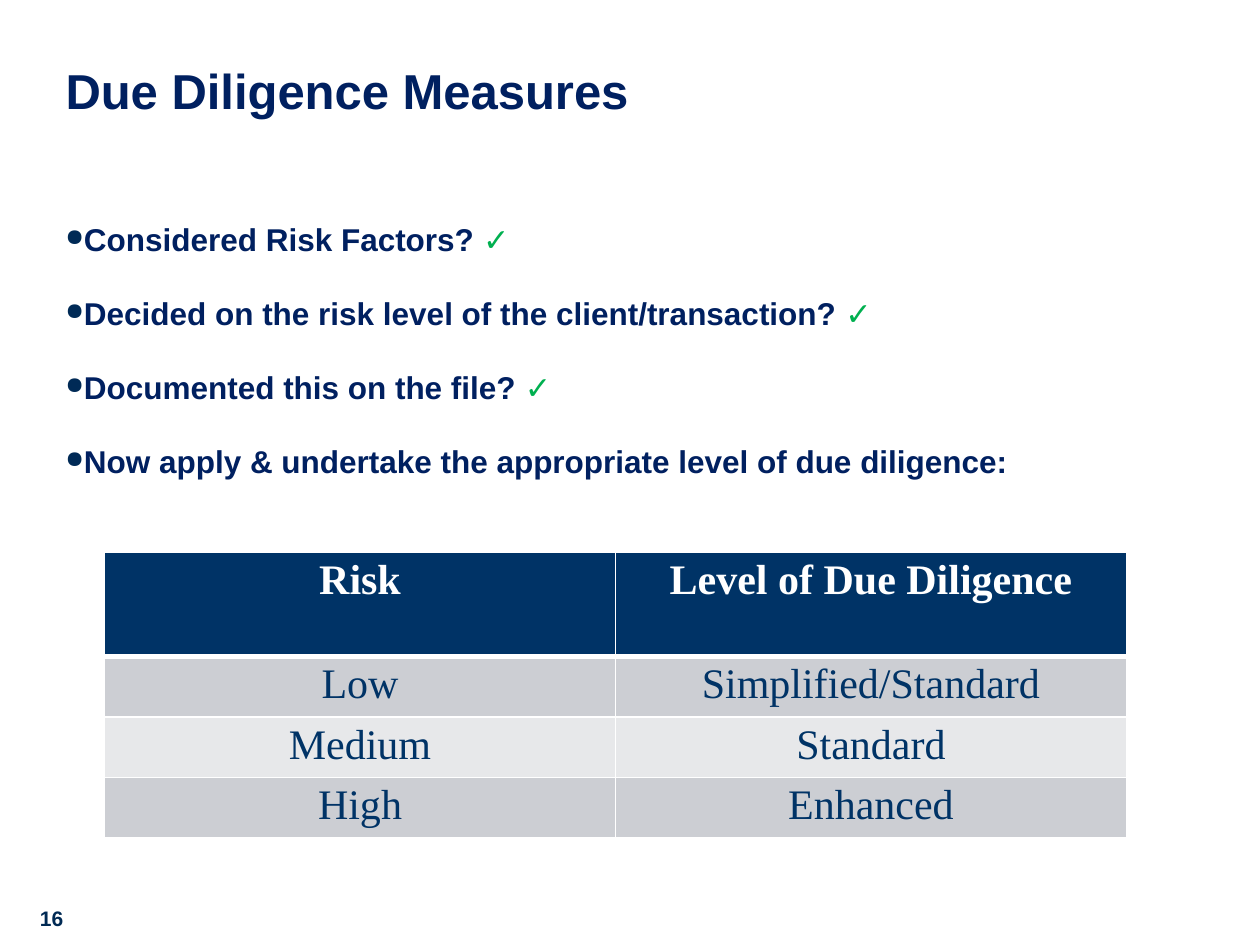
from lxml.etree import SubElement
from pptx import Presentation
from pptx.dml.color import RGBColor
from pptx.enum.text import MSO_ANCHOR, PP_ALIGN
from pptx.oxml.ns import qn
from pptx.util import Inches, Pt

NAVY = "002060"
GREEN = "00B050"
TABLE_BLUE = "003366"
WHITE = "FFFFFF"


def color(value):
    return RGBColor.from_string(value)


def set_font(font, name, size, value, bold):
    font.name = name
    font.size = Pt(size)
    font.color.rgb = color(value)
    font.bold = bold


presentation = Presentation()
presentation.slide_width = Inches(10)
presentation.slide_height = Inches(7.5)
slide = presentation.slides.add_slide(presentation.slide_layouts[5])

# Title
title = slide.shapes.title
title.left, title.top = Inches(0.42), Inches(0.36)
title.width, title.height = Inches(5.68), Inches(0.64)
title.text_frame.text = "Due Diligence Measures"
title.text_frame.vertical_anchor = MSO_ANCHOR.BOTTOM
paragraph = title.text_frame.paragraphs[0]
paragraph.alignment = PP_ALIGN.LEFT
paragraph.line_spacing = 0.9
set_font(paragraph.font, "Arial", 28, NAVY, True)

# Checklist: text and the green tick that follows it
checklist = [
    ("Considered Risk Factors? ", "✓"),
    ("Decided on the risk level of the client/transaction? ", "✓"),
    ("Documented this on the file?", " ✓"),
    ("Now apply & undertake the appropriate level of due diligence:", ""),
]
body = slide.shapes.add_textbox(Inches(0.42), Inches(1.7), Inches(9.16), Inches(2.5))
frame = body.text_frame
frame.word_wrap = True
for index, (item, tick) in enumerate(checklist):
    paragraph = frame.paragraphs[0] if index == 0 else frame.add_paragraph()
    properties = paragraph._p.get_or_add_pPr()
    properties.set("marL", "0")
    properties.set("indent", str(-Inches(0.38)))
    if index:
        paragraph.space_before = Pt(20.7)
    bullet_color = SubElement(properties, qn("a:buClr"))
    SubElement(bullet_color, qn("a:srgbClr"), val="002A56")
    SubElement(properties, qn("a:buSzPct"), val="75000")
    SubElement(properties, qn("a:buChar"), char="●")
    set_font(paragraph.font, "Arial", 18, NAVY, True)
    for text, value in ((item, NAVY), (tick, GREEN)):
        if text:
            run = paragraph.add_run()
            run.text = text
            set_font(run.font, "Arial", 18, value, True)

# Risk table
rows = [
    ("Risk", "Level of Due Diligence"),
    ("Low", "Simplified/Standard"),
    ("Medium", "Standard"),
    ("High", "Enhanced"),
]
row_fills = [TABLE_BLUE, "CCCED3", "E7E8EA", "CCCED3"]
row_heights = [0.83, 0.47, 0.47, 0.47]
table = slide.shapes.add_table(
    len(rows), 2, Inches(0.83), Inches(4.38), Inches(8.11), Inches(sum(row_heights))
).table
for row_index, row in enumerate(rows):
    is_header = row_index == 0
    table.rows[row_index].height = Inches(row_heights[row_index])
    for column_index, text in enumerate(row):
        cell = table.cell(row_index, column_index)
        cell.margin_top = cell.margin_bottom = Inches(0.04)
        cell.text = text
        paragraph = cell.text_frame.paragraphs[0]
        paragraph.alignment = PP_ALIGN.CENTER
        set_font(paragraph.font, "Times New Roman", 24,
                 WHITE if is_header else TABLE_BLUE, is_header)
        # White borders, thick below the header
        cell_properties = cell._tc.get_or_add_tcPr()
        for side in ("L", "R", "T", "B"):
            thick = (row_index, side) in ((0, "B"), (1, "T"))
            line = SubElement(cell_properties, qn("a:ln" + side),
                              w=str(Pt(3 if thick else 1)))
            line_fill = SubElement(line, qn("a:solidFill"))
            SubElement(line_fill, qn("a:srgbClr"), val=WHITE)
        cell.fill.solid()
        cell.fill.fore_color.rgb = color(row_fills[row_index])

# Page number
page_number = slide.shapes.add_textbox(Inches(0.09), Inches(7.14), Inches(0.64), Inches(0.3))
page_number.text_frame.word_wrap = True
page_number.text_frame.vertical_anchor = MSO_ANCHOR.BOTTOM
page_number.text_frame.text = "16"
paragraph = page_number.text_frame.paragraphs[0]
paragraph.alignment = PP_ALIGN.CENTER
set_font(paragraph.font, "Arial", 12, "002A54", True)

presentation.save("out.pptx")
